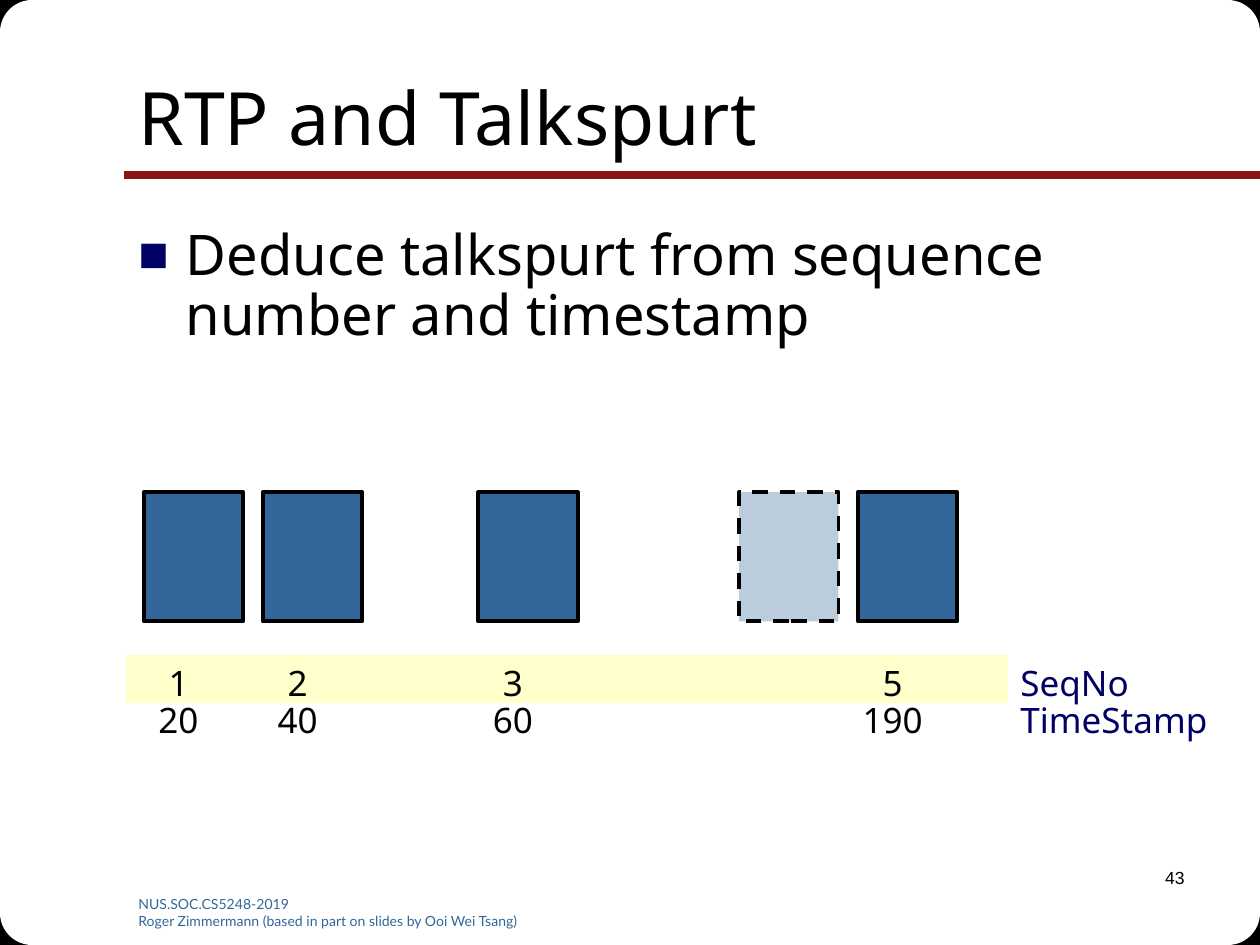
from dataclasses import dataclass
from itertools import product

from lxml import etree
from pptx import Presentation
from pptx import util as u
from pptx.dml.color import RGBColor
from pptx.enum import dml, shapes, text
from pptx.oxml.ns import qn
from pptx.slide import Slide

Pt = u.Pt
BLACK = RGBColor(0x00, 0x00, 0x00)
WHITE = RGBColor(0xFF, 0xFF, 0xFF)
NAVY = RGBColor(0x00, 0x00, 0x66)
BLUE = RGBColor(0x33, 0x66, 0x99)
RED = RGBColor(0x89, 0x14, 0x11)
YELLOW = RGBColor(0xFF, 0xFF, 0xCC)

WIDTH, HEIGHT = 720, 540
MARGIN = 72
PACKET_W, PACKET_H, PACKET_TOP = 56.8, 73.8, 281.3
LABEL_TOP, LABEL_H = 374.4, 55.4
LABEL_OFFSET = 19.8

# left edge, sequence number and timestamp; the lost packet has no numbers
PACKETS = [
    (82.2, "1", "20"),
    (150.3, "2", "40"),
    (273.3, "3", "60"),
    (422.4, None, None),
    (490.3, "5", "190"),
]


@dataclass
class Painter:
    s: Slide
    font: str = "Noto Sans"
    color: RGBColor = BLACK

    def box(self, x, y, w, h, fill, kind=shapes.MSO_SHAPE.RECTANGLE,
            line=None, width=2.25, dash=None, alpha=None):
        sp = self.s.shapes.add_shape(kind, Pt(x), Pt(y), Pt(w), Pt(h))
        sp.shadow.inherit = False
        sp.fill.solid()
        sp.fill.fore_color.rgb = fill
        if alpha is not None:
            clr = sp.fill._xPr.find(".//" + qn("a:srgbClr"))
            etree.SubElement(clr, qn("a:alpha"), val=str(alpha * 1000))
        if line is None:
            sp.line.fill.background()
        else:
            sp.line.color.rgb = line
            sp.line.width = Pt(width)
            if dash:
                sp.line.dash_style = dash
        return sp

    def rule(self, x1, x2, y, color, width):
        c = self.s.shapes.add_connector(
            shapes.MSO_CONNECTOR.STRAIGHT, Pt(x1), Pt(y), Pt(x2), Pt(y))
        c.line.color.rgb = color
        c.line.width = Pt(width)
        etree.SubElement(c._element.spPr, qn("a:effectLst"))

    def text(self, x, y, w, h, lines, size, font=None, color=None,
             middle=False, wrap=True, **para):
        """Add a text box, one paragraph a line; para holds paragraph formats."""
        tf = self.s.shapes.add_textbox(Pt(x), Pt(y), Pt(w), Pt(h)).text_frame
        tf.word_wrap = wrap
        if middle:
            tf.vertical_anchor = text.MSO_ANCHOR.MIDDLE
        for i, line in enumerate(lines):
            p = tf.add_paragraph() if i else tf.paragraphs[0]
            for name, value in para.items():
                setattr(p, name, value)
            r = p.add_run()
            r.text = line
            for name, value in {"size": Pt(size), "name": font or self.font}.items():
                setattr(r.font, name, value)
            r.font.color.rgb = color or self.color
        return tf

    def bullet(self, p, indent, color, percent):
        pPr = p._p.get_or_add_pPr()
        pPr.set("marL", str(Pt(indent)))
        pPr.set("indent", str(-Pt(indent)))
        clr = etree.SubElement(pPr, qn("a:buClr"))
        etree.SubElement(clr, qn("a:srgbClr"), val=str(color))
        etree.SubElement(pPr, qn("a:buSzPct"), val=str(percent * 1000))
        etree.SubElement(pPr, qn("a:buFont"), typeface="Arial")
        etree.SubElement(pPr, qn("a:buChar"), char="■")

    def corners(self, size, **style):
        """Put a square of the given size in each corner of the slide."""
        for x, y in product((0, WIDTH - size), (0, HEIGHT - size)):
            self.box(x, y, size, size, **style)


def draw_frame(d):
    d.corners(31, fill=BLACK, line=BLACK, width=0.75)
    d.corners(110, fill=WHITE, kind=shapes.MSO_SHAPE.ROUNDED_RECTANGLE)
    d.rule(WIDTH, 70.6, 100, RED, 4.5)
    d.text(MARGIN, 508.3, 246.2, 20.2,
           ["NUS.SOC.CS5248-2019",
            "Roger Zimmermann (based in part on slides by Ooi Wei Tsang)"],
           8, font="Lato", color=BLUE)
    d.text(534, 492, 150, 36, ["43"], 10, font="Arial",
           alignment=text.PP_ALIGN.RIGHT)


def draw_packets(d):
    label = {"size": 20, "middle": True, "wrap": False, "line_spacing": 0.9}
    for x, seq, stamp in PACKETS:
        lost = {} if seq else {"dash": dml.MSO_LINE.DASH, "alpha": 33}
        d.box(x, PACKET_TOP, PACKET_W, PACKET_H, BLUE, line=BLACK, **lost)
        if seq:
            w = 13 * len(stamp) + 13.6
            d.text(x + LABEL_OFFSET - w / 2, LABEL_TOP, w, LABEL_H,
                   [seq, stamp], alignment=text.PP_ALIGN.CENTER, **label)
    d.text(576, LABEL_TOP, 123, LABEL_H, ["SeqNo", "TimeStamp"],
           color=NAVY, **label)


def main():
    prs = Presentation()
    prs.slide_width, prs.slide_height = Pt(WIDTH), Pt(HEIGHT)
    d = Painter(prs.slides.add_slide(prs.slide_layouts[6]))
    draw_frame(d)
    d.box(MARGIN, LABEL_TOP, 504, 27.4, YELLOW)
    d.text(MARGIN, 21.6, 612, 90, ["RTP and Talkspurt"], 42, middle=True)
    tf = d.text(MARGIN, 126, 612, 356.4,
                ["Deduce talkspurt from sequence number and timestamp"], 32,
                line_spacing=0.9, space_before=Pt(1.6))
    d.bullet(tf.paragraphs[0], 27, NAVY, 90)
    draw_packets(d)
    prs.save("out.pptx")


if __name__ == "__main__":
    main()
